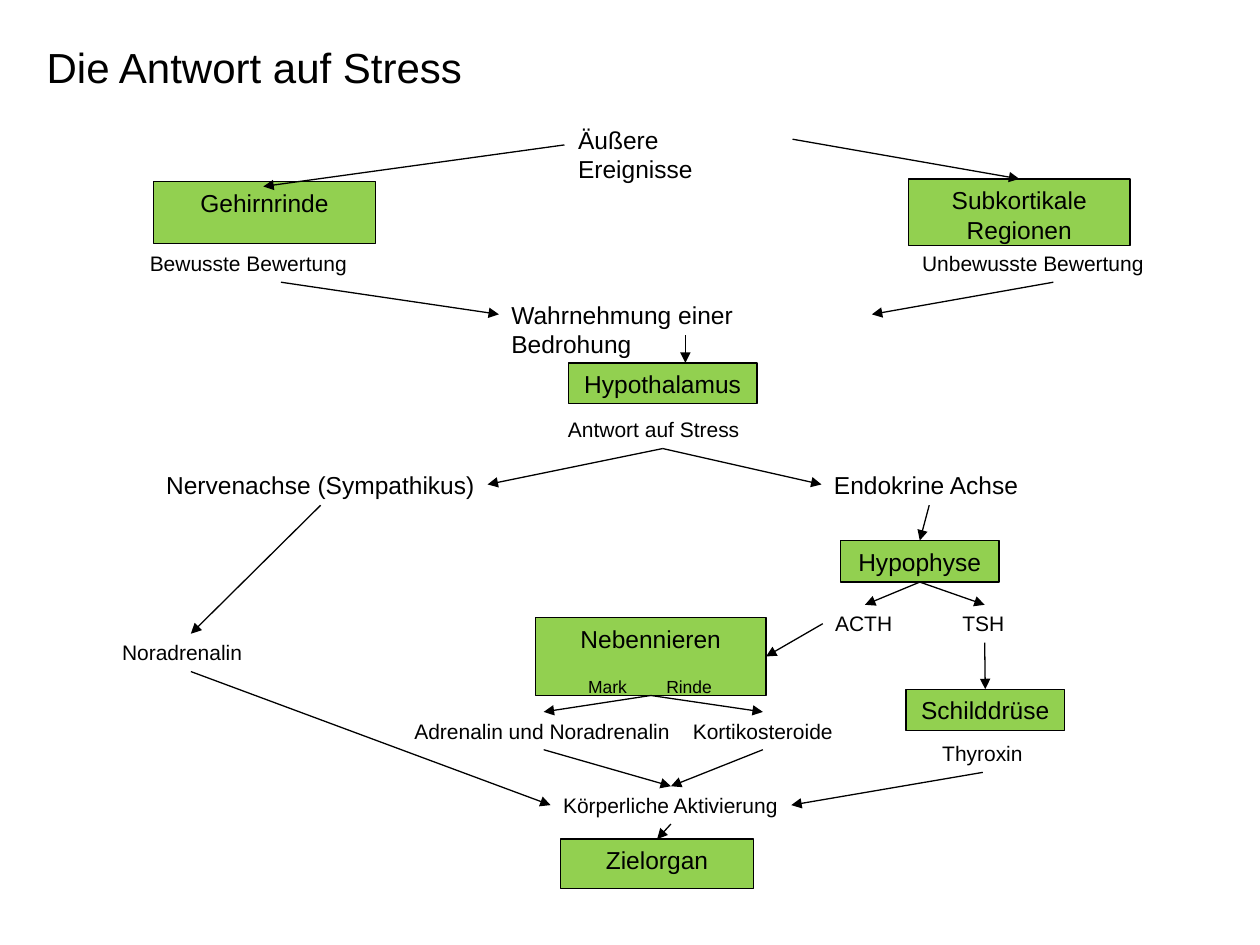
"""Build the stress response flow chart slide."""
from dataclasses import dataclass

from lxml.etree import SubElement
from pptx import Presentation
from pptx.dml.color import RGBColor
from pptx.enum.shapes import MSO_CONNECTOR as Connector, MSO_SHAPE as Shape
from pptx.enum.text import MSO_ANCHOR as Anchor, MSO_AUTO_SIZE as AutoSize, PP_ALIGN as Align
from pptx.oxml.ns import qn
from pptx.util import Inches, Pt


@dataclass(frozen=True)
class Theme:
    font: str = "Arial"
    ink: RGBColor = RGBColor(0x00, 0x00, 0x00)
    green: RGBColor = RGBColor(0x92, 0xD0, 0x50)
    title: Pt = Pt(24)
    stage: Pt = Pt(14)
    label: Pt = Pt(12)
    small: Pt = Pt(10)
    line: Pt = Pt(0.75)


theme = Theme()
TOP, LEFT, BOTTOM, RIGHT = range(4)


def write_text(shape, text, size, alignment):
    frame = shape.text_frame
    frame.word_wrap = True
    frame.auto_size = AutoSize.NONE
    frame.vertical_anchor = Anchor.TOP
    frame.text = text
    paragraph = frame.paragraphs[0]
    paragraph.alignment = alignment
    paragraph.font.name = theme.font
    paragraph.font.size = size
    paragraph.font.color.rgb = theme.ink


def add_arrow(start_x, start_y, end_x, end_y):
    arrow = slide.shapes.add_connector(
        Connector.STRAIGHT, Inches(start_x), Inches(start_y), Inches(end_x), Inches(end_y))
    arrow.line.color.rgb = theme.ink
    arrow.line.width = theme.line
    SubElement(arrow.line._get_or_add_ln(), qn("a:tailEnd"), type="triangle")
    SubElement(arrow._element.spPr, qn("a:effectLst"))
    return arrow


presentation = Presentation()
presentation.slide_width = Inches(10)
presentation.slide_height = Inches(7.5)
slide = presentation.slides.add_slide(presentation.slide_layouts[5])

title = slide.shapes.title
title.left, title.top, title.width, title.height = map(Inches, (0.27, 0.28, 3.98, 0.5))
write_text(title, "Die Antwort auf Stress", theme.title, Align.LEFT)

boxes = [
    ("Gehirnrinde", 1.22, 1.44, 1.76, 0.49),
    ("Subkortikale Regionen", 7.21, 1.42, 1.76, 0.53),
    ("Hypothalamus", 4.51, 2.88, 1.5, 0.32),
    ("Hypophyse", 6.67, 4.29, 1.26, 0.33),
    ("Nebennieren", 4.25, 4.9, 1.83, 0.62),
    ("Schilddrüse", 7.19, 5.47, 1.26, 0.33),
    ("Zielorgan", 4.45, 6.66, 1.53, 0.39),
]
nodes = {}
for text, *frame in boxes:
    box = slide.shapes.add_shape(Shape.RECTANGLE, *map(Inches, frame))
    box.shadow.inherit = False
    box.fill.solid()
    box.fill.fore_color.rgb = theme.green
    box.line.color.rgb = theme.ink
    box.line.width = theme.line
    write_text(box, text, theme.stage, Align.CENTER)
    nodes[text] = box

parts = nodes["Nebennieren"].text_frame.add_paragraph()
parts.text = "\tMark\tRinde"
parts.alignment = Align.LEFT
parts.space_before = Pt(13)
tab_list = SubElement(parts._p.get_or_add_pPr(), qn("a:tabLst"))
for position in (0.32, 0.94):
    SubElement(tab_list, qn("a:tab"), pos=str(Inches(position)), algn="l")
parts.font.name = theme.font
parts.font.size = theme.small
parts.font.color.rgb = theme.ink

stages = [
    ("Äußere Ereignisse", 4.49, 0.94, 1.8, 0.4),
    ("Wahrnehmung einer Bedrohung", 3.96, 2.33, 2.96, 0.4),
    ("Nervenachse (Sympathikus)", 1.22, 3.68, 2.65, 0),
    ("Endokrine Achse", 6.52, 3.68, 1.71, 0),
]
labels = [
    ("Bewusste Bewertung", 1.09, 1.94, 2.28, 0),
    ("Unbewusste Bewertung", 7.22, 1.94, 2.28, 0),
    ("Antwort auf Stress", 4.41, 3.26, 1.7, 0),
    ("ACTH", 6.53, 4.8, 0.67, 0),
    ("TSH", 7.54, 4.8, 0.55, 0),
    ("Noradrenalin", 0.87, 5.03, 1.29, 0),
    ("Adrenalin und Noradrenalin", 3.19, 5.65, 2.25, 0),
    ("Kortikosteroide", 5.4, 5.65, 1.31, 0),
    ("Thyroxin", 7.38, 5.83, 0.84, 0),
    ("Körperliche Aktivierung", 4.37, 6.24, 1.91, 0),
]
for entries, size, height in ((stages, theme.stage, 0.33), (labels, theme.label, 0.3)):
    for text, left, top, width, right_margin in entries:
        label = slide.shapes.add_textbox(*map(Inches, (left, top, width, height)))
        write_text(label, text, size, Align.LEFT)
        label.text_frame.margin_right = Inches(right_margin)
        nodes[text] = label

add_arrow(4.48, 1.15, 2.09, 1.48)
routes = [
    ("Äußere Ereignisse", RIGHT, "Subkortikale Regionen", TOP),
    ("Unbewusste Bewertung", BOTTOM, "Wahrnehmung einer Bedrohung", RIGHT),
    ("Bewusste Bewertung", BOTTOM, "Wahrnehmung einer Bedrohung", LEFT),
    ("Antwort auf Stress", BOTTOM, "Endokrine Achse", LEFT),
    ("Antwort auf Stress", BOTTOM, "Nervenachse (Sympathikus)", RIGHT),
    ("Endokrine Achse", BOTTOM, "Hypophyse", TOP),
    ("Hypophyse", BOTTOM, "ACTH", TOP),
    ("Hypophyse", BOTTOM, "TSH", TOP),
    ("TSH", BOTTOM, "Schilddrüse", TOP),
    ("Nervenachse (Sympathikus)", BOTTOM, "Noradrenalin", TOP),
    ("Nebennieren", BOTTOM, "Adrenalin und Noradrenalin", TOP),
    ("Nebennieren", BOTTOM, "Kortikosteroide", TOP),
    ("Adrenalin und Noradrenalin", BOTTOM, "Körperliche Aktivierung", TOP),
    ("Kortikosteroide", BOTTOM, "Körperliche Aktivierung", TOP),
    ("ACTH", LEFT, "Nebennieren", RIGHT),
    ("Körperliche Aktivierung", BOTTOM, "Zielorgan", TOP),
    ("Thyroxin", BOTTOM, "Körperliche Aktivierung", RIGHT),
    ("Noradrenalin", BOTTOM, "Körperliche Aktivierung", LEFT),
]
add_arrow(5.44, 2.66, 5.44, 2.88)
for source, source_side, target, target_side in routes:
    arrow = add_arrow(0, 0, 0, 0)
    arrow.begin_connect(nodes[source], source_side)
    arrow.end_connect(nodes[target], target_side)

presentation.save("out.pptx")
